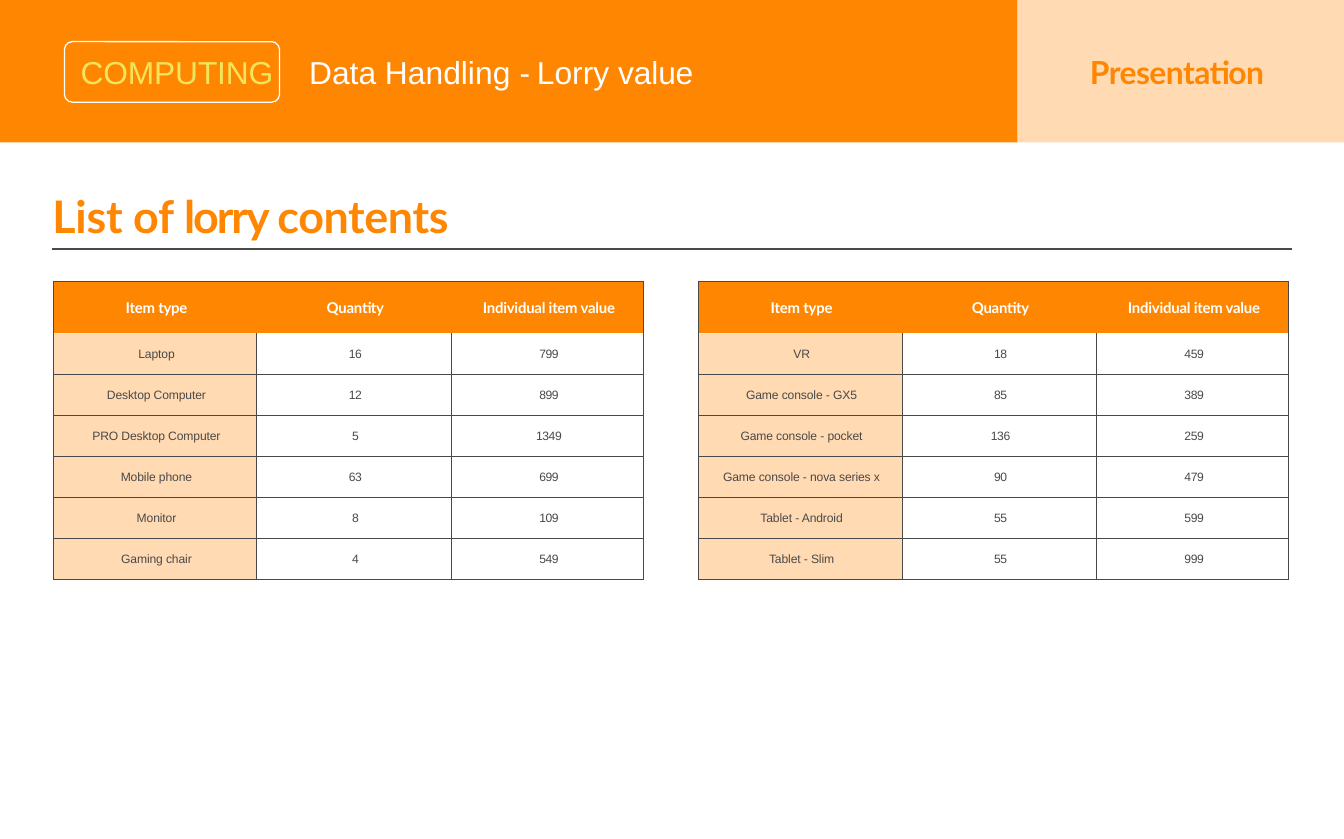
from lxml.etree import SubElement
from pptx import Presentation
from pptx.dml.color import RGBColor
from pptx.enum.shapes import MSO_CONNECTOR, MSO_SHAPE
from pptx.enum.text import MSO_ANCHOR, PP_ALIGN
from pptx.oxml import parse_xml
from pptx.oxml.ns import nsdecls, qn
from pptx.util import Inches, Pt

ORANGE, YELLOW, WHITE, GREY = "FF8600", "F2E55B", "FFFFFF", "4A494A"


def paint(fill, color, opacity=100):
    """Solid fill from a hex string, with opacity in percent."""
    fill.solid()
    fill.fore_color.rgb = RGBColor.from_string(color)
    if opacity < 100:
        rgb = fill._xPr.find(qn("a:solidFill"))[0]
        SubElement(rgb, qn("a:alpha"), val=str(opacity * 1000))


def write(frame, *parts, size, color, font="Arial", bold=False,
          align=PP_ALIGN.LEFT, anchor=MSO_ANCHOR.TOP, indent=0.01, top=0.02):
    """Write (text, letter spacing in points) parts as one paragraph."""
    frame.word_wrap = True
    frame.vertical_anchor = anchor
    frame.margin_left, frame.margin_top = Inches(indent), Inches(top)
    frame.margin_right = frame.margin_bottom = 0
    paragraph = frame.paragraphs[0]
    paragraph.alignment = align
    for text, spacing in parts:
        run = paragraph.add_run()
        run.text = text
        run.font.name, run.font.size, run.font.bold = font, Pt(size), bold
        paint(run.font.fill, color)
        run._r.get_or_add_rPr().set("spc", str(round(spacing * 100)))


prs = Presentation()
prs.slide_width, prs.slide_height = Inches(10), Inches(6.24)
slide = prs.slides.add_slide(prs.slide_layouts[5])
shapes = slide.shapes

# Header bands
for left, width, opacity in [(7.57, 2.43, 30), (0, 7.57, 100)]:
    band = shapes.add_shape(MSO_SHAPE.RECTANGLE, Inches(left), 0, Inches(width), Inches(1.06))
    band.shadow.inherit = False
    paint(band.fill, ORANGE, opacity)
    band.line.fill.background()

# Subject frame
subject_frame = shapes.add_shape(MSO_SHAPE.ROUNDED_RECTANGLE, Inches(0.48), Inches(0.31),
                                 Inches(1.6), Inches(0.45))
subject_frame.adjustments[0] = 0.13
subject_frame.shadow.inherit = False
subject_frame.fill.background()
paint(subject_frame.line.fill, WHITE)
subject_frame.line.width = Pt(0.68)

# Header texts
header_texts = [
    (0.49, 1.59, [("COMPUTING", -0.1)], dict(color=YELLOW, indent=0.11)),
    (8.1, 1.39, [("Presentation", -0.3)], dict(color=ORANGE, font="Lato", bold=True)),
    (2.29, 2.88, [("Data Handling ", 0), ("- ", -1.1), ("Lorry ", 0), ("value", -0.1)],
     dict(color=WHITE)),
]
for left, width, parts, style in header_texts:
    label = shapes.add_textbox(Inches(left), Inches(0.37), Inches(width), Inches(0.31))
    write(label.text_frame, *parts, size=17, **style)

# Title and rule
title = shapes.title
title.left, title.top, title.width, title.height = map(Inches, (0.38, 1.38, 3.15, 0.43))
write(title.text_frame, ("List of ", -0.1), ("lorry ", -1.1), ("contents", -0.2),
      size=24, color=ORANGE, font="Lato", bold=True)
rule = shapes.add_connector(MSO_CONNECTOR.STRAIGHT, Inches(0.39), Inches(1.85),
                            Inches(9.61), Inches(1.85))
paint(rule.line.fill, GREY)
rule.line.width = Pt(1)
SubElement(rule._element.spPr, qn("a:effectLst"))

# Content tables
headings = ("Item type", "Quantity", "Individual item value")
column_widths = (1.51, 1.45, 1.43)
table_height, heading_height = 2.22, 0.39
lorry_contents = [
    (0.4, [("Laptop", 16, 799), ("Desktop Computer", 12, 899),
           ("PRO Desktop Computer", 5, 1349), ("Mobile phone", 63, 699),
           ("Monitor", 8, 109), ("Gaming chair", 4, 549)]),
    (5.2, [("VR", 18, 459), ("Game console - GX5", 85, 389),
           ("Game console - pocket", 136, 259), ("Game console - nova series x", 90, 479),
           ("Tablet - Android", 55, 599), ("Tablet - Slim", 55, 999)]),
]
for left, items in lorry_contents:
    rows = [headings, *items]
    last_row, last_column = len(rows) - 1, len(headings) - 1
    table = shapes.add_table(len(rows), len(headings), Inches(left), Inches(2.09),
                             Inches(sum(column_widths)), Inches(table_height)).table
    table.first_row = table.horz_banding = False
    for column, width in zip(table.columns, column_widths):
        column.width = Inches(width)
    for r, values in enumerate(rows):
        table.rows[r].height = Inches(
            (table_height - heading_height) / len(items) if r else heading_height)
        for c, value in enumerate(values):
            cell = table.cell(r, c)
            if r == 0:
                paint(cell.fill, ORANGE)
                style = dict(size=8, color=WHITE, font="Lato", bold=True)
                spacing = -0.15
            else:
                paint(cell.fill, *((WHITE,) if c else (ORANGE, 30)))
                style = dict(size=6.5, color=GREY)
                spacing = -0.2 if c else -0.05
            write(cell.text_frame, (str(value), spacing), align=PP_ALIGN.CENTER,
                  indent=0.02, top=0, **style)
            cell.vertical_anchor = MSO_ANCHOR.MIDDLE
            cell.margin_left, cell.margin_right = Inches(0.02), 0
            cell.margin_top = cell.margin_bottom = 0

            # Outer borders are thicker; the heading row has no inner ones
            inner = 0.25 if r else 0
            borders = {
                "lnL": 0.5 if c == 0 else inner,
                "lnR": 0.5 if c == last_column else inner,
                "lnT": 0.5 if r == 0 else 0.25 if r > 1 else 0,
                "lnB": 0.5 if r == last_row else inner,
            }
            for place, (side, points) in enumerate(borders.items()):
                paint_xml = (f'<a:solidFill><a:srgbClr val="{GREY}"/></a:solidFill>'
                             if points else "<a:noFill/>")
                cell._tc.get_or_add_tcPr().insert(place, parse_xml(
                    f'<a:{side} {nsdecls("a")} w="{Pt(points)}">{paint_xml}</a:{side}>'))

prs.save("out.pptx")
